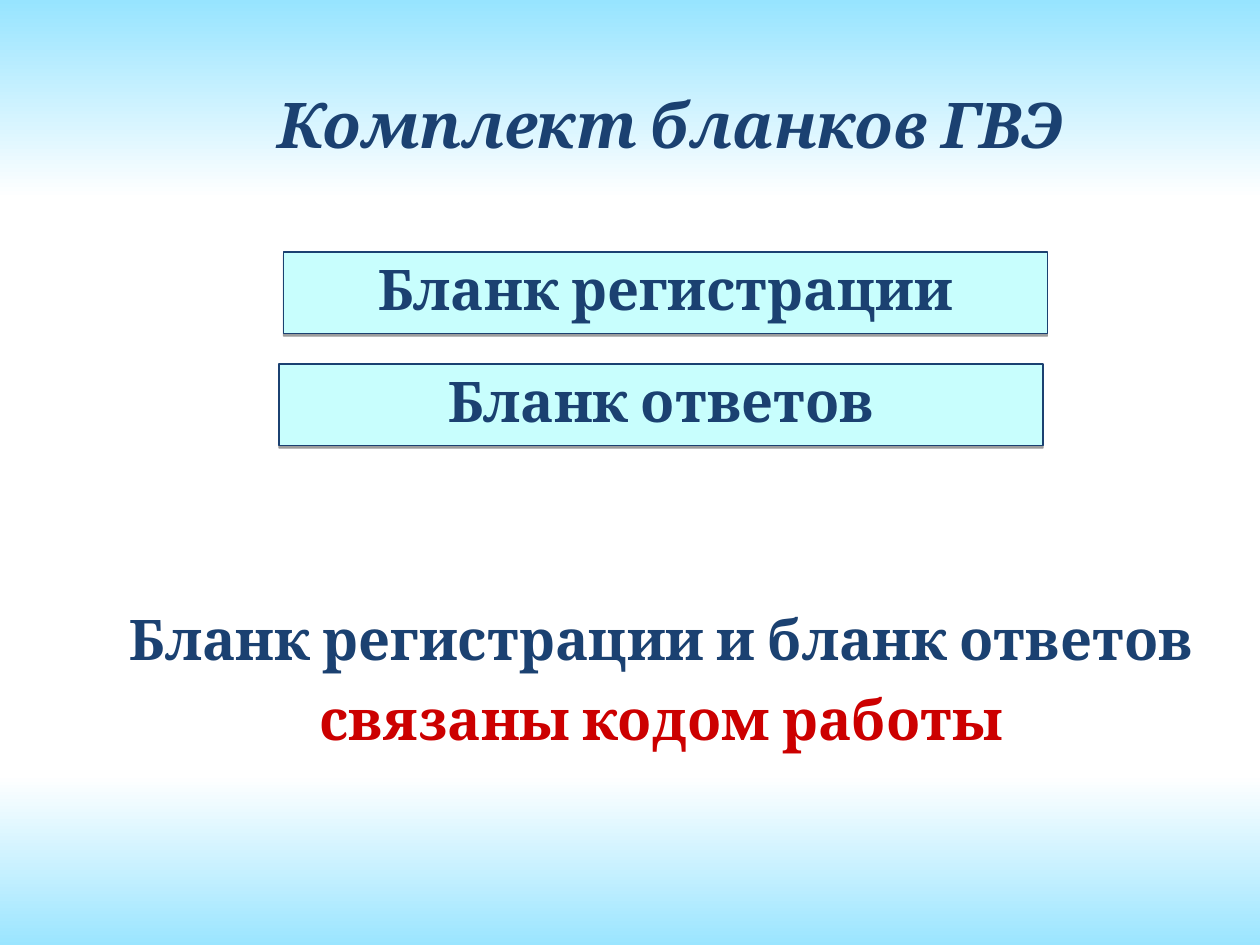
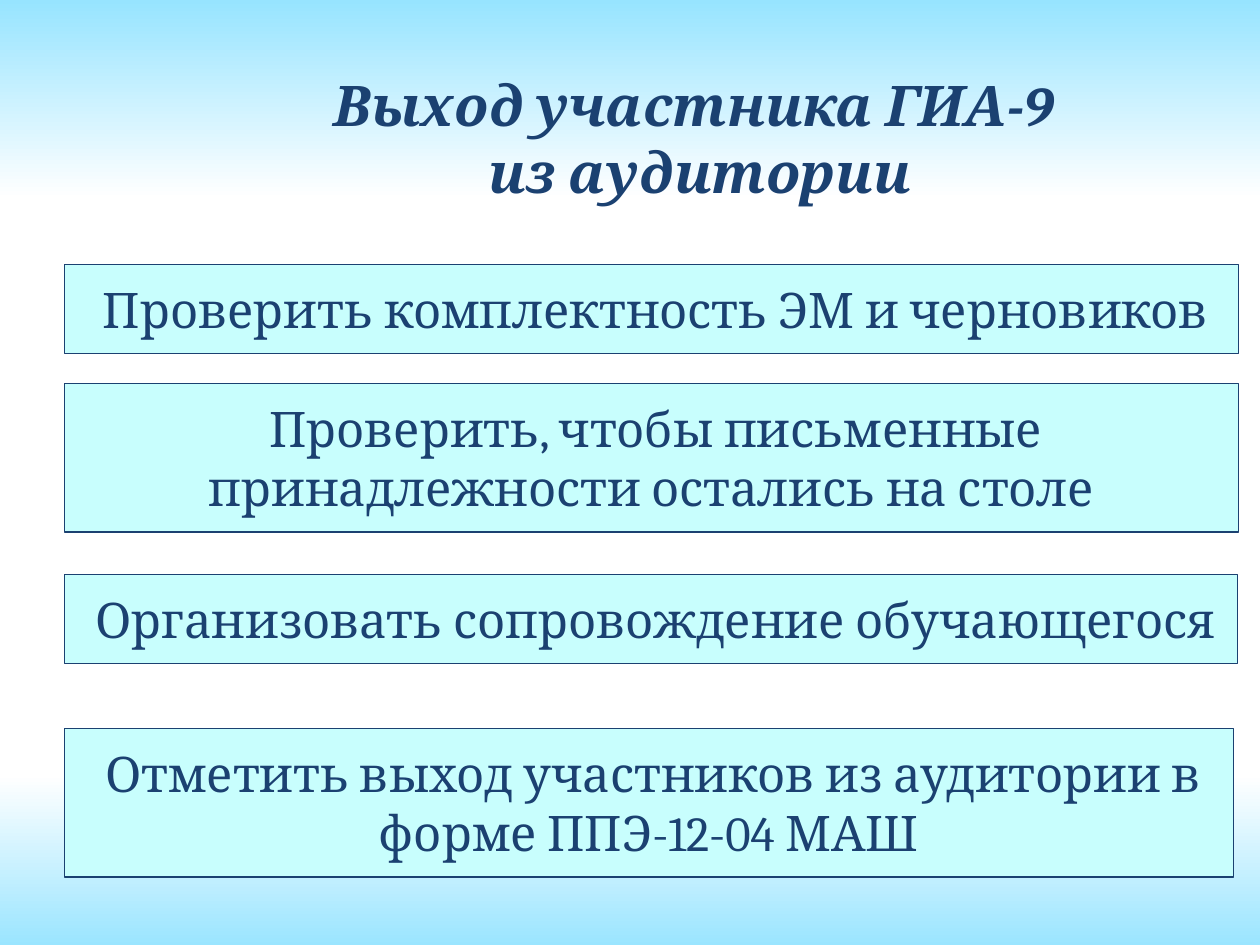
from collections import namedtuple
from dataclasses import dataclass

from lxml.etree import SubElement
from pptx import Presentation
from pptx.dml.color import RGBColor
from pptx.enum.shapes import MSO_SHAPE as Shape
from pptx.enum.text import MSO_ANCHOR as Anchor, PP_ALIGN as Align
from pptx.oxml.ns import qn
from pptx.util import Pt

Box = namedtuple("Box", "left top width height")


@dataclass(frozen=True)
class Theme:
    font: str = "Cambria"
    ink: str = "1B4171"
    accent: str = "CC0000"
    panel: str = "C8FEFD"
    shade: str = "000000"
    sky: tuple = ((0, "97E4FF"), (21, "FFFFFF"), (82, "FFFFFF"), (100, "9BE5FF"))
    title: int = 36
    heading: int = 32
    body: int = 28
    line: float = 0.75
    side_inset: float = 7.2


THEME = Theme()


def add_page(deck):
    page = deck.slides.add_slide(deck.slide_layouts[6])
    fill = page.background.fill
    fill.gradient()
    fill.gradient_angle = 270
    stops = next(page.element.iter(qn("a:gsLst")))
    for stop in list(stops):
        stops.remove(stop)
    for percent, color in THEME.sky:
        stop = SubElement(stops, qn("a:gs"), pos=str(percent * 1000))
        SubElement(stop, qn("a:srgbClr"), val=color)
    return page


def write_lines(shape, lines, size, inset, colors=(), bold=False, italic=False,
                gap=0, spacing=None, indent=0):
    frame = shape.text_frame
    frame.word_wrap = True
    frame.vertical_anchor = Anchor.TOP
    frame.margin_left = frame.margin_right = Pt(THEME.side_inset)
    frame.margin_top = frame.margin_bottom = Pt(inset)
    for index, line in enumerate(lines):
        para = frame.add_paragraph() if index else frame.paragraphs[0]
        para.text = line
        para.alignment = Align.CENTER
        if index and gap:
            para.space_before = Pt(gap)
        if spacing:
            para.line_spacing = spacing
        if indent:
            para._p.get_or_add_pPr().set("indent", str(Pt(indent)))
        font = para.font
        font.name, font.size = THEME.font, Pt(size)
        font.bold, font.italic = bold, italic
        color = colors[index] if colors else THEME.ink
        font.color.rgb = RGBColor.from_string(color)


def add_text(page, box, lines, size, inset, **style):
    shape = page.shapes.add_textbox(*map(Pt, box))
    write_lines(shape, lines, size, inset, bold=True, **style)


def add_panel(page, box, text, size, inset, **style):
    panel = page.shapes.add_shape(Shape.RECTANGLE, *map(Pt, box))
    panel.shadow.inherit = False
    panel.fill.solid()
    panel.fill.fore_color.rgb = RGBColor.from_string(THEME.panel)
    panel.line.color.rgb = RGBColor.from_string(THEME.ink)
    panel.line.width = Pt(THEME.line)
    write_lines(panel, [text], size, inset, **style)
    return panel


def add_drop_shadow(panel):
    effects = panel._element.spPr.find(qn("a:effectLst"))
    shadow = SubElement(effects, qn("a:outerShdw"), blurRad="0",
                        dist=str(Pt(1.6)), dir="5400000",
                        algn="t", rotWithShape="0")
    color = SubElement(shadow, qn("a:srgbClr"), val=THEME.shade)
    SubElement(color, qn("a:alpha"), val="38000")


def build_forms_page(deck):
    page = add_page(deck)
    add_text(page, Box(60.5, 342, 635, 138),
             ["Бланк регистрации и бланк ответов", "связаны кодом работы"],
             THEME.heading, 3.6, colors=(THEME.ink, THEME.accent), gap=7)
    forms = (("Бланк регистрации", 162, 144), ("Бланк ответов", 159.5, 208))
    for name, left, top in forms:
        panel = add_panel(page, Box(left, top, 436.5, 46.5), name,
                          THEME.heading, 5.8, bold=True, spacing=0.9)
        add_drop_shadow(panel)
    add_text(page, Box(46.8, 37.5, 673, 69), ["Комплект бланков ГВЭ"],
             THEME.title, 11.5, italic=True)


def build_exit_page(deck):
    page = add_page(deck)
    add_text(page, Box(65.5, 36.7, 669, 85),
             ["Выход участника ГИА-9 ", "из аудитории"],
             THEME.heading, 3.6, italic=True)
    steps = (
        ("Проверить комплектность ЭМ и черновиков", 151, 671, 51),
        ("Проверить, чтобы письменные принадлежности остались на столе",
         219, 671, 85),
        ("Организовать сопровождение обучающегося", 328.3, 670.5, 51),
        ("Отметить выход участников из аудитории в форме ППЭ-12-04 МАШ",
         416.2, 668, 85),
    )
    for text, top, width, height in steps:
        add_panel(page, Box(36.7, top, width, height), text,
                  THEME.body, 8.6, indent=5)


def main():
    deck = Presentation()
    deck.slide_width, deck.slide_height = Pt(720), Pt(540)
    build_forms_page(deck)
    build_exit_page(deck)
    deck.save("out.pptx")


if __name__ == "__main__":
    main()
